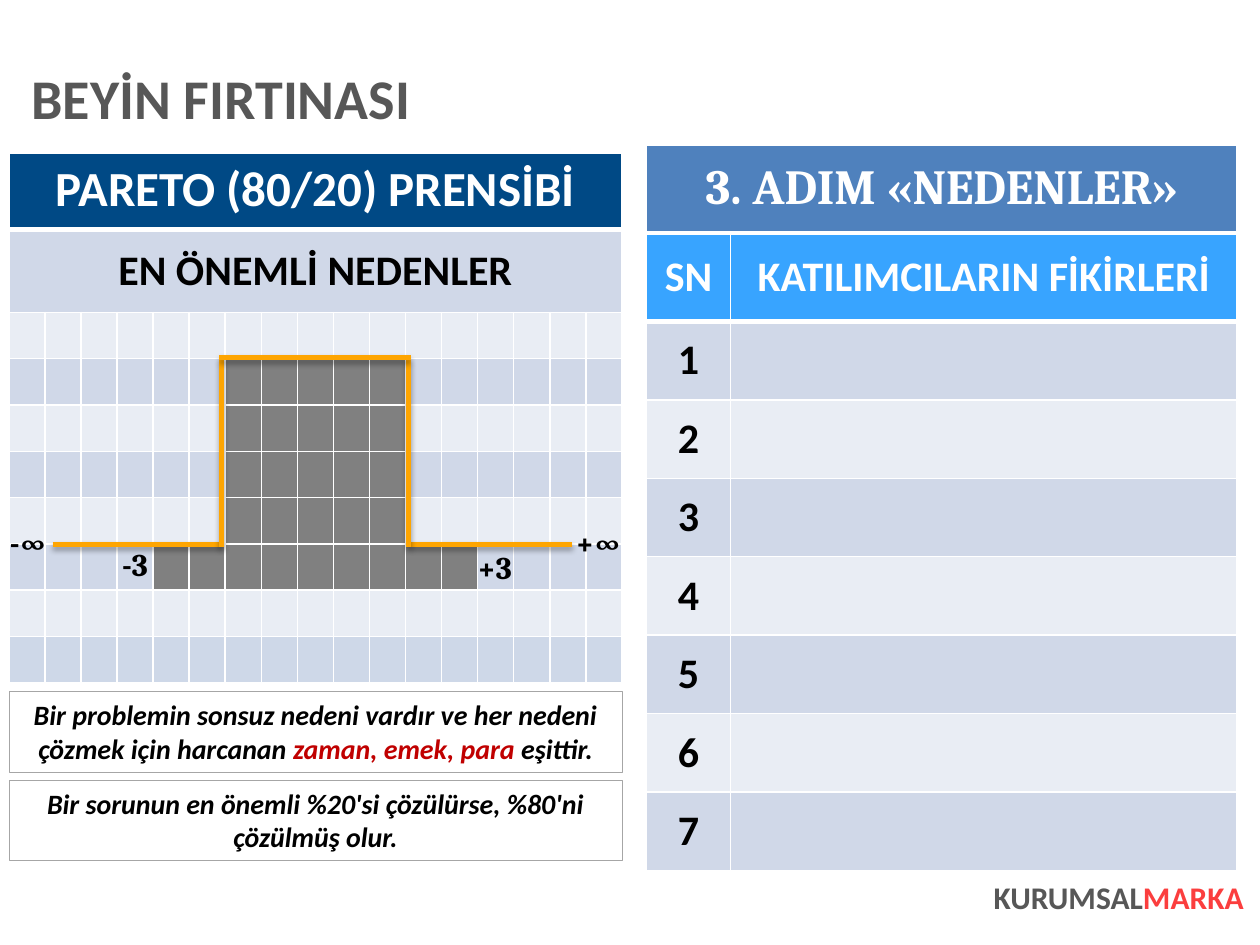
import pptx
import pptx.util
import pptx.dml.color
import pptx.enum.shapes
import pptx.enum.text
import pptx.oxml
import pptx.oxml.ns
from dataclasses import dataclass

Inches, Pt = pptx.util.Inches, pptx.util.Pt
RGB = pptx.dml.color.RGBColor.from_string
ALIGN = pptx.enum.text.PP_ALIGN
ANCHOR = pptx.enum.text.MSO_ANCHOR
SHAPE = pptx.enum.shapes.MSO_SHAPE
STRAIGHT = pptx.enum.shapes.MSO_CONNECTOR.STRAIGHT


@dataclass
class Theme:
    body: str = "Calibri"
    serif: str = "Cambria"
    white: str = "FFFFFF"
    black: str = "000000"
    grey: str = "575757"
    brand_red: str = "FB3E3E"
    red: str = "C00000"
    navy: str = "004985"
    blue: str = "4F81BD"
    sky: str = "38A4FF"
    band_dark: str = "D0D8E8"
    band_light: str = "E9EDF4"
    band_last: str = "CED8E8"
    bar: str = "808080"
    curve: str = "FEA501"
    frame: str = "A6A6A6"
    title: int = 32
    banner: int = 28
    heading: int = 24
    label: int = 18
    note: int = 16


T = Theme()

# Content
TITLE = "BEYİN FIRTINASI"
BRAND = [("KURUMSAL", T.grey), ("MARKA", T.brand_red)]
PARETO_HEADS = [("PARETO (80/20) PRENSİBİ", T.banner, T.white, T.navy),
                ("EN ÖNEMLİ NEDENLER", T.heading, T.black, T.band_dark)]
GRID_COLS, GRID_ROWS = 17, 8
GRID_BARS = {1: (6, 10), 2: (6, 10), 3: (6, 10), 4: (6, 10), 5: (4, 12)}
CURVE = [((0.42, 4.32), (1.76, 4.32)), ((1.76, 2.85), (1.76, 4.34)),
         ((3.25, 4.32), (4.54, 4.32)), ((3.24, 2.85), (3.24, 4.34)),
         ((1.74, 2.84), (3.26, 2.84))]
AXIS_LABELS = [("+∞", 4.47, 4.1), ("-∞", -0.02, 4.1),
               ("+3", 3.69, 4.3), ("-3", 0.87, 4.28)]
NOTES = [
    [("Bir problemin sonsuz nedeni vardır ve her nedeni çözmek için harcanan ", T.black),
     ("zaman, emek, para ", T.red), ("eşittir.", T.black)],
    [("Bir sorunun en önemli %20'si çözülürse, %80'ni çözülmüş olur.", T.black)],
]
STEP_HEAD = "3. ADIM «NEDENLER»"
IDEA_HEADS = ["SN", "KATILIMCILARIN FİKİRLERİ"]
IDEA_COUNT = 7

# Layout in inches
PARETO_LEFT, PARETO_TOP, PARETO_WIDTH = 0.07, 1.2, 4.87
PARETO_HEIGHTS = [0.62, 0.66] + [2.94 / GRID_ROWS] * GRID_ROWS
IDEA_WIDTHS = [0.67, 4.02]
IDEA_HEIGHTS = [0.7, 0.7] + [4.36 / IDEA_COUNT] * IDEA_COUNT
NOTE_TOP, NOTE_HEIGHT, NOTE_PITCH = 5.49, 0.64, 0.7

deck = pptx.Presentation()
deck.slide_width, deck.slide_height = Inches(10), Inches(7.5)
slide = deck.slides.add_slide(deck.slide_layouts[6])


def write(frame, runs, size, font=T.body, align=ALIGN.LEFT, italic=False):
    paragraph = frame.paragraphs[0]
    paragraph.alignment = align
    paragraph.font.name, paragraph.font.size = font, Pt(size)
    paragraph.font.bold, paragraph.font.italic = True, italic
    for text, color in runs:
        run = paragraph.add_run()
        run.text = text
        run.font.color.rgb = RGB(color)
    return paragraph


def add_text(box, runs, size, insets=(0.1, 0.05), **style):
    frame = slide.shapes.add_textbox(*map(Inches, box)).text_frame
    frame.word_wrap = True
    frame.margin_left = frame.margin_right = Inches(insets[0])
    frame.margin_top = frame.margin_bottom = Inches(insets[1])
    return frame, write(frame, runs, size, **style)


def add_table(left, top, widths, heights):
    table = slide.shapes.add_table(
        len(heights), len(widths), Inches(left), Inches(top),
        Inches(sum(widths)), Inches(sum(heights))).table
    table.first_row = table.horz_banding = False
    for column, width in zip(table.columns, widths):
        column.width = Inches(width)
    for row, height in zip(table.rows, heights):
        row.height = Inches(height)
    return table


def fill_cell(cell, fill, text="", size=T.heading, color=T.black, font=T.body,
              top=1, bottom=1):
    cell.fill.solid()
    cell.fill.fore_color.rgb = RGB(fill)
    cell.vertical_anchor = ANCHOR.MIDDLE
    if text:
        write(cell.text_frame, [(text, color)], size, font, ALIGN.CENTER)
    else:
        cell.margin_left = cell.margin_right = cell.margin_top = cell.margin_bottom = 0
    # Borders come before the fill in the cell properties
    properties = cell._tc.get_or_add_tcPr()
    for place, (side, points) in enumerate(
            [("L", 1), ("R", 1), ("T", top), ("B", bottom)]):
        properties.insert(place, pptx.oxml.parse_xml(
            f'<a:ln{side} {pptx.oxml.ns.nsdecls("a")} w="{points * 12700}"><a:solidFill>'
            f'<a:srgbClr val="{T.white}"/></a:solidFill></a:ln{side}>'))


def band(index):
    return T.band_light if index % 2 == 0 else T.band_dark


# Brand and title
add_text((7.56, 6.97, 2.31, 0.56), BRAND, T.label, (0, 0), align=ALIGN.RIGHT)
title_frame, title = add_text((0.25, 0.45, 9.64, 0.71), [(TITLE, T.grey)], T.title, (0, 0.05))
title_frame.vertical_anchor = ANCHOR.MIDDLE
title.line_spacing = 0.9

# Pareto table with its shaded grid
pareto = add_table(PARETO_LEFT, PARETO_TOP,
                   [PARETO_WIDTH / GRID_COLS] * GRID_COLS, PARETO_HEIGHTS)
for r, (text, size, color, fill) in enumerate(PARETO_HEADS):
    pareto.cell(r, 0).merge(pareto.cell(r, GRID_COLS - 1))
    fill_cell(pareto.cell(r, 0), fill, text, size, color, top=3, bottom=1 if r else 3)
for r in range(GRID_ROWS):
    first, last = GRID_BARS.get(r, (GRID_COLS, 0))
    row_fill = T.band_last if r == GRID_ROWS - 1 else band(r)
    for c in range(GRID_COLS):
        fill_cell(pareto.cell(r + len(PARETO_HEADS), c),
                  T.bar if first <= c <= last else row_fill)

# Step curve over the grid
for start, end in CURVE:
    segment = slide.shapes.add_connector(STRAIGHT, *map(Inches, start + end))
    segment.line.color.rgb = RGB(T.curve)
    segment.line.width = Pt(3)
    segment._element.spPr.append(pptx.oxml.parse_xml(
        f'<a:effectLst {pptx.oxml.ns.nsdecls("a")}>'
        '<a:outerShdw blurRad="40000" dist="23000" dir="5400000" rotWithShape="0">'
        f'<a:srgbClr val="{T.black}"><a:alpha val="35000"/></a:srgbClr>'
        '</a:outerShdw></a:effectLst>'))
for text, left, top in AXIS_LABELS:
    add_text((left, top, 0.75, 0.4), [(text, T.black)], T.label, font=T.serif)

# Framed notes
for n, runs in enumerate(NOTES):
    note = slide.shapes.add_shape(SHAPE.RECTANGLE, *map(Inches, (
        PARETO_LEFT, NOTE_TOP + n * NOTE_PITCH, PARETO_WIDTH, NOTE_HEIGHT)))
    note.shadow.inherit = False
    note.fill.background()
    note.line.color.rgb = RGB(T.frame)
    note.line.width = Pt(0.25)
    note.text_frame.word_wrap = True
    note.text_frame.vertical_anchor = ANCHOR.TOP
    write(note.text_frame, runs, T.note, align=ALIGN.CENTER, italic=True)

# Participants' ideas
ideas = add_table(5.13, 1.15, IDEA_WIDTHS, IDEA_HEIGHTS)
ideas.cell(0, 0).merge(ideas.cell(0, 1))
fill_cell(ideas.cell(0, 0), T.blue, STEP_HEAD, T.banner, T.white, T.serif, bottom=3)
for c, text in enumerate(IDEA_HEADS):
    fill_cell(ideas.cell(1, c), T.sky, text, color=T.white, top=3, bottom=3)
for number in range(1, IDEA_COUNT + 1):
    for c, text in enumerate([str(number), ""]):
        fill_cell(ideas.cell(number + 1, c), band(number), text,
                  top=3 if number == 1 else 1)

deck.save("out.pptx")
